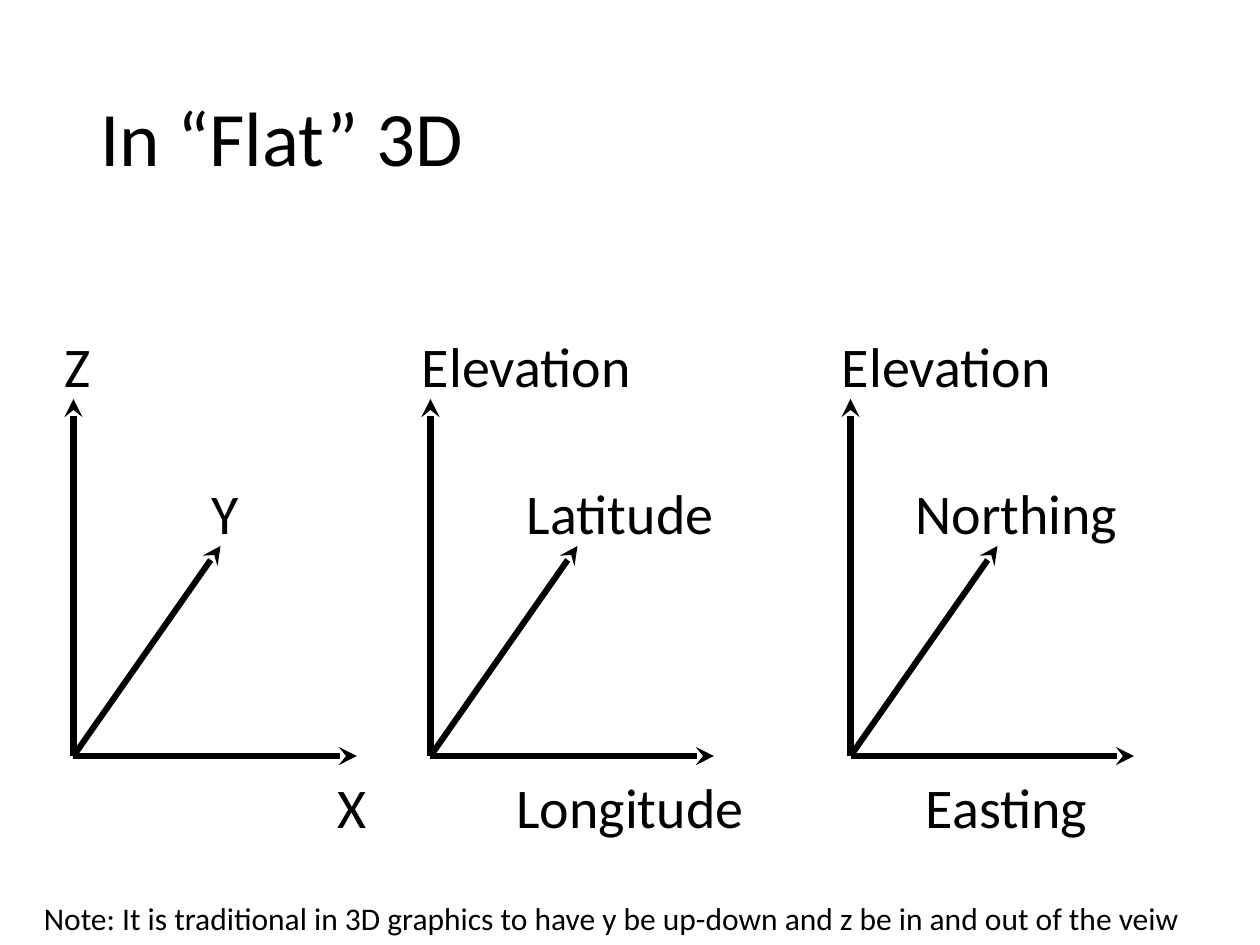
from lxml import etree
from pptx import Presentation
from pptx.dml.color import RGBColor
from pptx.enum import shapes, text
from pptx.oxml import ns
from pptx.util import Pt

BLACK = RGBColor(0, 0, 0)
WHITE = RGBColor(255, 255, 255)


class Board:
    """Style and current slide."""
    font = "Calibri"
    line = 3.5
    label = 32

    def __init__(self, slide):
        self.slide = slide
        fill = slide.background.fill
        fill.solid()
        fill.fore_color.rgb = WHITE

    def letter(self, frame, words, size):
        frame.text = words
        para = frame.paragraphs[0]
        para.alignment = text.PP_ALIGN.LEFT
        for run in para.runs:
            run.font.name = self.font
            run.font.size = Pt(size)
            run.font.color.rgb = BLACK
        return para

    def title(self, words, left, top, width, height):
        head = self.slide.shapes.title
        head.left, head.top = Pt(left), Pt(top)
        head.width, head.height = Pt(width), Pt(height)
        head.text_frame.vertical_anchor = text.MSO_ANCHOR.MIDDLE
        self.letter(head.text_frame, words, 44).line_spacing = 0.9

    def text(self, words, left, top, width, height=46, size=label):
        box = self.slide.shapes.add_textbox(
            Pt(left), Pt(top), Pt(width), Pt(height))
        frame = box.text_frame
        frame.word_wrap = False
        frame.auto_size = text.MSO_AUTO_SIZE.SHAPE_TO_FIT_TEXT
        self.letter(frame, words, size)

    def arrow(self, x, y, dx, dy):
        link = self.slide.shapes.add_connector(
            shapes.MSO_CONNECTOR.STRAIGHT,
            Pt(x), Pt(y), Pt(x + dx), Pt(y + dy))
        link.line.width = Pt(self.line)
        link.line.color.rgb = BLACK
        props = link._element.spPr
        tail = etree.SubElement(props.find(ns.qn("a:ln")), ns.qn("a:tailEnd"))
        tail.set("type", "stealth")
        etree.SubElement(props, ns.qn("a:effectLst"))


def main():
    deck = Presentation()
    deck.slide_width, deck.slide_height = Pt(720), Pt(540)
    board = Board(deck.slides.add_slide(deck.slide_layouts[5]))

    board.title("In “Flat” 3D", 50, 29, 620, 104)

    # Three axis systems: origin x, then (name, left, width) for up, depth, across
    base = 432
    tops = (186, 270, 438)
    rays = ((84, -120), (162, 0), (0, -204))
    systems = (
        (42, ("Z", 30, 29.5), ("Y", 114, 30), ("X", 186, 31.5)),
        (246, ("Elevation", 234, 135), ("Latitude", 294, 122.5),
         ("Longitude", 288, 146)),
        (486, ("Elevation", 474, 135), ("Northing", 516, 131),
         ("Easting", 522, 108)),
    )
    for x, *names in systems:
        for dx, dy in rays:
            board.arrow(x, base, dx, dy)
        for (name, left, width), top in zip(names, tops):
            board.text(name, left, top, width)

    # Note at the foot
    board.text("Note: It is traditional in 3D graphics to have y be up-down "
               "and z be in and out of the veiw", 18, 510, 672, 29, 18)

    deck.save("out.pptx")


if __name__ == "__main__":
    main()
